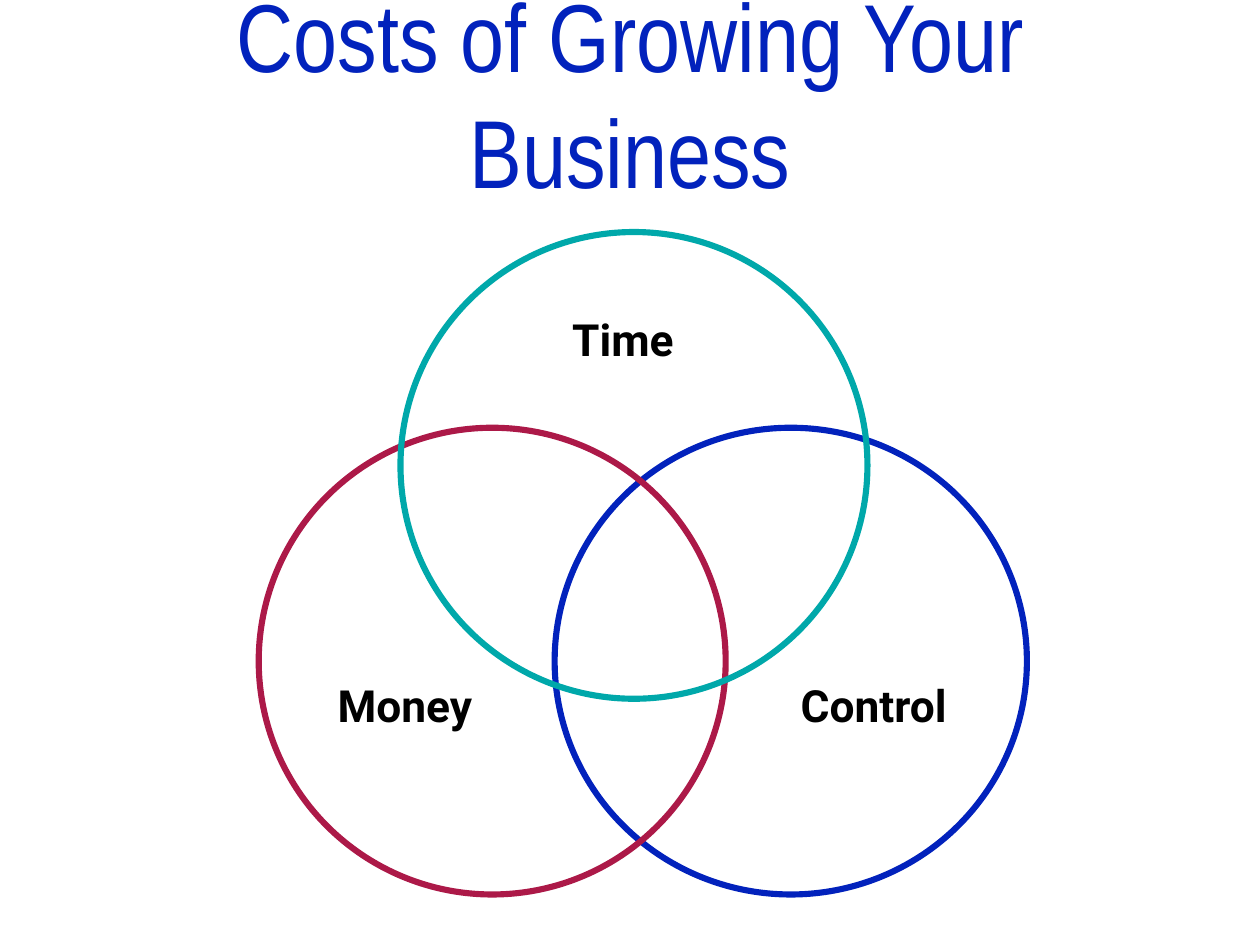
from pptx import Presentation
from pptx.dml.color import RGBColor
from pptx.enum.shapes import MSO_SHAPE
from pptx.enum.text import MSO_ANCHOR, MSO_AUTO_SIZE, PP_ALIGN
from pptx.util import Inches, Pt

OVAL = MSO_SHAPE.OVAL
MIDDLE = MSO_ANCHOR.MIDDLE
CENTER = PP_ALIGN.CENTER
NO_FIT = MSO_AUTO_SIZE.NONE

WIDE, HIGH = 14.22, 10.67
COLORS = {"blue": "0222BC", "red": "AC1948", "teal": "00A8AA", "black": "000000"}
RING = 5.27

# Ring: color, left and top in the diagram, width
RINGS = [
    ("blue", 3.34, 2.21, 5.33),
    ("red", 0, 2.21, RING),
    ("teal", 1.6, 0, RING),
]
# Label: text, center x and center y in the diagram, width
LABELS = [
    ("Time", 4.11, 1.21, 1.3),
    ("Money", 1.65, 5.34, 1.73),
    ("Control", 6.94, 5.34, 1.89),
]


def color(name):
    return RGBColor.from_string(COLORS[name])


def write(shape, text, font, size, tint, bold=False, wrap=True):
    frame = shape.text_frame
    frame.auto_size = NO_FIT
    frame.word_wrap = wrap
    frame.vertical_anchor = MIDDLE
    frame.margin_left = frame.margin_right = Inches(0.06)
    frame.margin_top = frame.margin_bottom = Inches(0.06)
    line = frame.paragraphs[0]
    line.alignment = CENTER
    run = line.add_run()
    run.text = text
    run.font.name = font
    run.font.size = Pt(size)
    run.font.bold = bold
    run.font.color.rgb = color(tint)


def add_title(slide, left, top, width, height):
    title = slide.shapes.title
    title.left, title.top = Inches(left), Inches(top)
    title.width, title.height = Inches(width), Inches(height)
    write(title, "Costs of Growing Your Business", "Arial Narrow", 78.4, "blue")


def add_venn(slide, left, top):
    for tint, x, y, width in RINGS:
        ring = slide.shapes.add_shape(
            OVAL, Inches(left + x), Inches(top + y), Inches(width), Inches(RING))
        ring.shadow.inherit = False
        ring.fill.background()
        ring.line.color.rgb = color(tint)
        ring.line.width = Pt(5)

    height = 0.71
    for text, x, y, width in LABELS:
        label = slide.shapes.add_textbox(
            Inches(left + x - width / 2), Inches(top + y - height / 2),
            Inches(width), Inches(height))
        write(label, text, "Roboto", 36, "black", bold=True, wrap=False)


def main():
    deck = Presentation()
    deck.slide_width, deck.slide_height = Inches(WIDE), Inches(HIGH)
    slide = deck.slides.add_slide(deck.slide_layouts[5])
    add_title(slide, 1.04, 0.28, 12.14, 1.52)
    add_venn(slide, 2.92, 2.62)
    deck.save("out.pptx")


if __name__ == "__main__":
    main()
